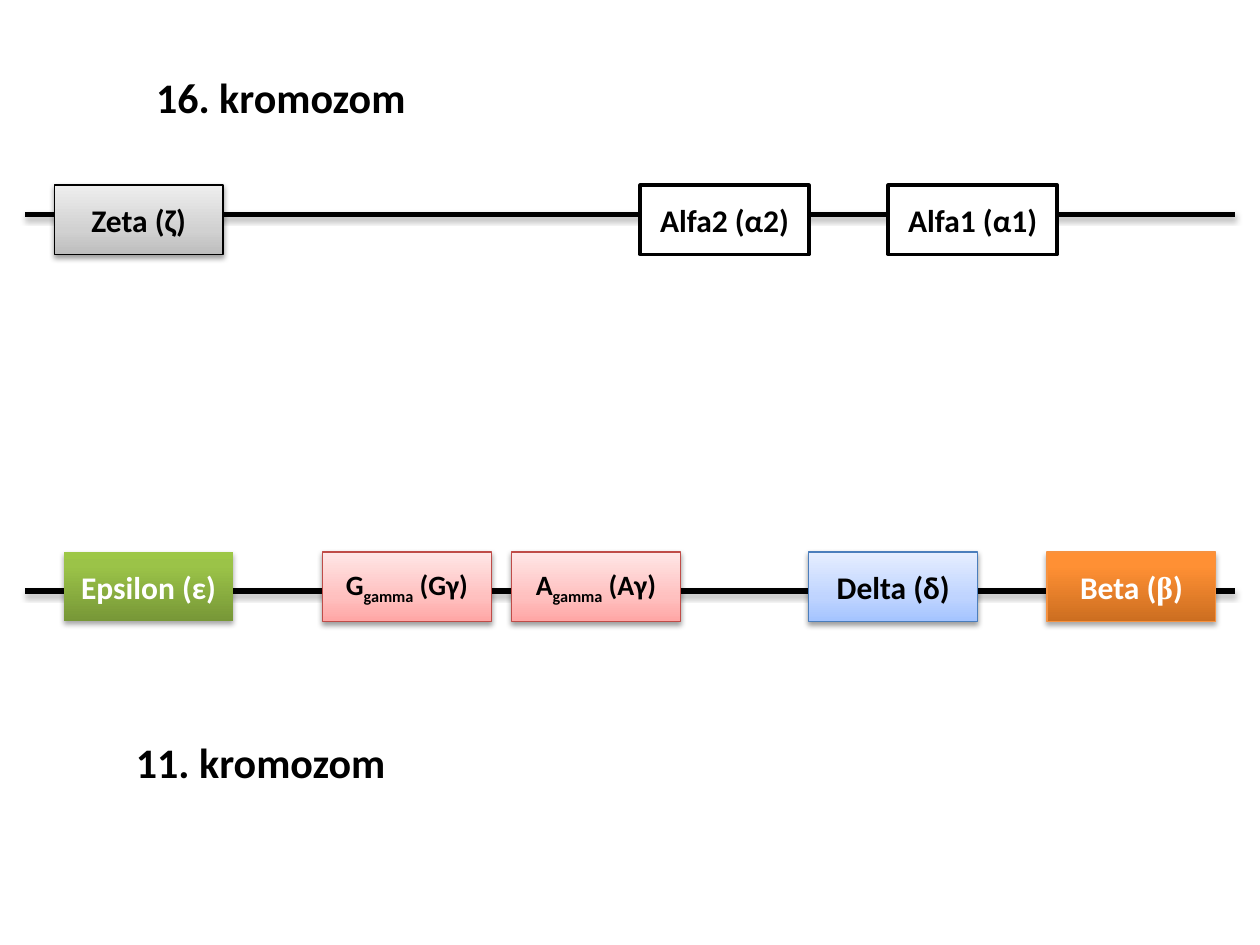
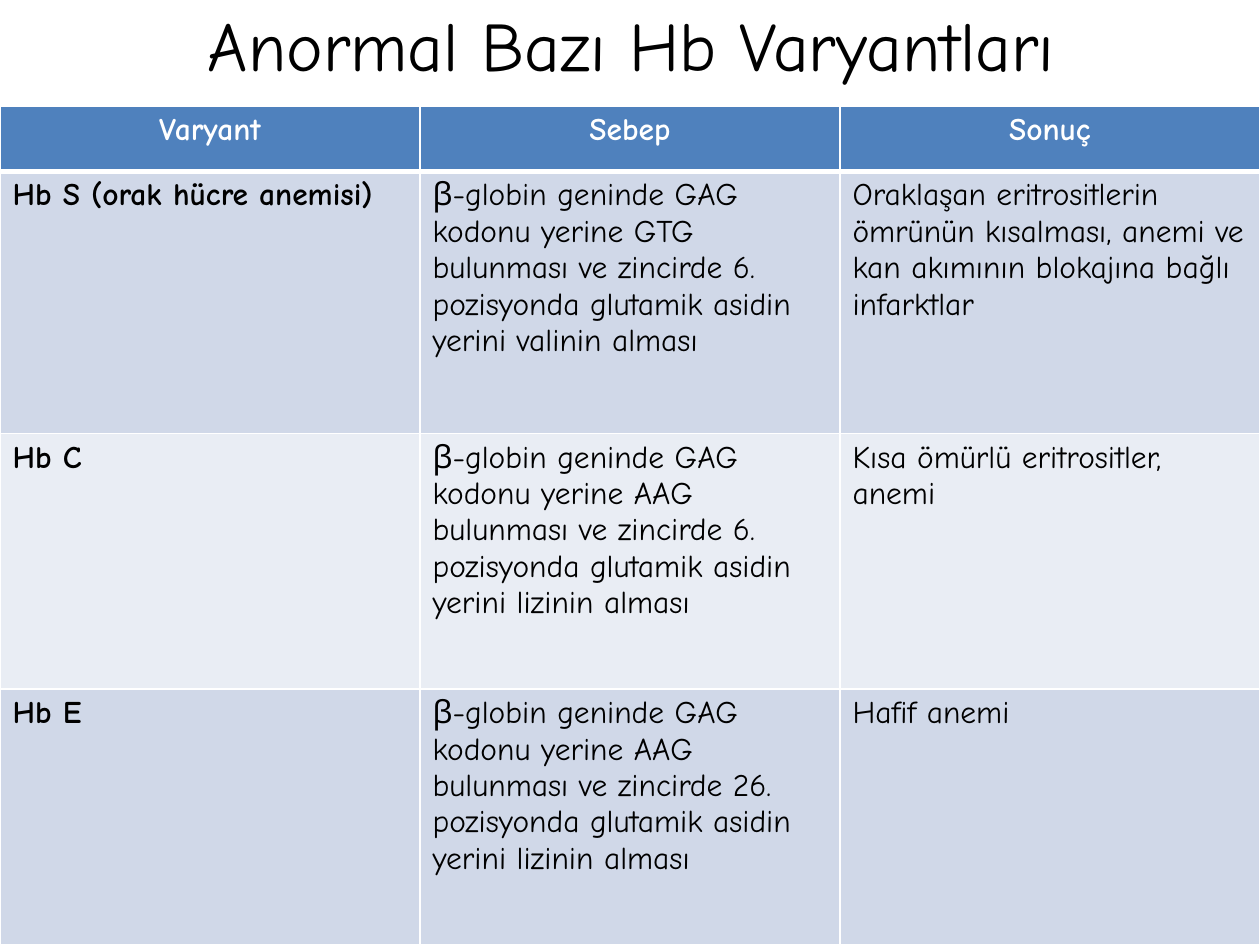
from dataclasses import dataclass

from lxml import etree
from pptx import Presentation
from pptx.dml.color import RGBColor
from pptx.enum.shapes import MSO_CONNECTOR, MSO_SHAPE
from pptx.enum.text import MSO_ANCHOR, MSO_AUTO_SIZE, PP_ALIGN
from pptx.oxml.ns import qn
from pptx.util import Pt

RECT = MSO_SHAPE.RECTANGLE
STRAIGHT = MSO_CONNECTOR.STRAIGHT
MIDDLE = MSO_ANCHOR.MIDDLE
FIT = MSO_AUTO_SIZE.SHAPE_TO_FIT_TEXT
LEFT, CENTER = PP_ALIGN.LEFT, PP_ALIGN.CENTER


@dataclass(frozen=True)
class Theme:
    black: str = "000000"
    white: str = "FFFFFF"
    header: str = "4F81BD"
    bands: tuple = ("D0D8E8", "E9EDF4")
    gene_font: str = "Calibri"
    greek_font: str = "Times New Roman"
    table_font: str = "Comic Neue"
    title_size: float = 39.6
    label_size: float = 24
    body_size: float = 18
    gamma_size: float = 16
    subscript: str = "-25000"
    gene_width: float = 96.5
    gene_height: float = 39.6
    strand_width: float = 3


T = Theme()
STRONG = (35, 1.8)
SOFT = (38, 1.6)

GENE_STYLES = {
    "epsilon": dict(stops=((0, "779737"), (80, "9BC348"), (100, "9DC746")),
                    line=None, shadow=STRONG, color=T.white),
    "gamma": dict(stops=((0, "FFA6A5"), (35, "FFC0BF"), (100, "FFE7E7")),
                  line=("BF4C48", 0.75), shadow=SOFT, color=T.black),
    "delta": dict(stops=((0, "A4C4FF"), (35, "BFD4FF"), (100, "E6EEFF")),
                  line=("4B7EBC", 0.75), shadow=SOFT, color=T.black),
    "beta": dict(stops=((0, "CC6E20"), (80, "FF9034"), (100, "FF9136")),
                 line=("F69240", 0.75), shadow=STRONG, color=T.white),
    "zeta": dict(stops=((0, "BDBDBD"), (35, "D1D1D1"), (100, "EEEEEE")),
                 line=(T.black, 0.75), shadow=SOFT, color=T.black),
    "alfa": dict(stops=None, line=(T.black, 2), shadow=None, color=T.black),
}


def gamma_runs(letter):
    return [(letter, {}), ("gamma", {"subscript": True}), (f" ({letter}γ)", {})]


CHROMOSOMES = [
    dict(box=(14.4, 315.4, 691.2), strand=22.3,
         label=("11. kromozom", 56.2, 102.2),
         genes=[("epsilon", 22.3, [("Epsilon (ε)", {})], T.body_size),
                ("gamma", 169.9, gamma_runs("G"), T.gamma_size),
                ("gamma", 277.9, gamma_runs("A"), T.gamma_size),
                ("delta", 447.8, [("Delta (δ)", {})], T.body_size),
                ("beta", 583.9, [("Beta (", {}), ("β", {"name": T.greek_font}),
                                 (")", {})], T.body_size)]),
    dict(box=(14.4, 105.8, 691.2), strand=16.6,
         label=("16. kromozom", 67.7, -68.4),
         genes=[("zeta", 16.6, [("Zeta (ζ)", {})], T.body_size),
                ("alfa", 351.4, [("Alfa2 (α2)", {})], T.body_size),
                ("alfa", 493.2, [("Alfa1 (α1)", {})], T.body_size)]),
]


def cause(codon, position, amino_acid):
    return (f"β-globin geninde GAG kodonu yerine {codon} bulunması ve zincirde "
            f"{position}. pozisyonda glutamik asidin yerini {amino_acid} alması")


VARIANTS = [
    ("Varyant", "Sebep", "Sonuç"),
    ("Hb S (orak hücre anemisi)", cause("GTG", 6, "valinin"),
     "Oraklaşan eritrositlerin ömrünün kısalması, anemi ve kan akımının "
     "blokajına bağlı infarktlar"),
    ("Hb C", cause("AAG", 6, "lizinin"), "Kısa ömürlü eritrositler, anemi"),
    ("Hb E", cause("AAG", 26, "lizinin"), "Hafif anemi"),
]
ROW_HEIGHTS = (37.4, 149.8, 146.2, 146.2)


def rgb(value):
    return RGBColor.from_string(value)


def sub(parent, tag, **attrs):
    el = etree.SubElement(parent, qn(tag))
    for key, value in attrs.items():
        el.set(key, str(value))
    return el


def write(tf, runs, size, font, color, bold=False, align=LEFT):
    p = tf.paragraphs[0]
    p.alignment = align
    for text, extra in runs:
        r = p.add_run()
        r.text = text
        fmt = dict(name=font, size=Pt(size), bold=bold) | extra
        if fmt.pop("subscript", False):
            r._r.get_or_add_rPr().set("baseline", T.subscript)
        for key, value in fmt.items():
            setattr(r.font, key, value)
        r.font.color.rgb = rgb(color)


def add_shadow(effects, alpha, distance):
    shadow = sub(effects, "a:outerShdw", blurRad=Pt(3.1), dist=Pt(distance),
                 dir=5400000, rotWithShape=0)
    color = sub(shadow, "a:srgbClr", val=T.black)
    sub(color, "a:alpha", val=alpha * 1000)


def fill_gradient(sp, stops):
    sp.fill.gradient()
    sp.fill.gradient_angle = 90
    stop_list = sp._element.spPr.find(qn("a:gradFill")).find(qn("a:gsLst"))
    for old in list(stop_list):
        stop_list.remove(old)
    for position, color in stops:
        stop = sub(stop_list, "a:gs", pos=position * 1000)
        sub(stop, "a:srgbClr", val=color)


def add_strand(s, x, y, width):
    line = s.shapes.add_connector(STRAIGHT, Pt(x), Pt(y), Pt(x + width), Pt(y))
    line.line.color.rgb = rgb(T.black)
    line.line.width = Pt(T.strand_width)
    add_shadow(sub(line._element.spPr, "a:effectLst"), *STRONG)


def add_gene(s, x, y, kind, runs, size):
    style = GENE_STYLES[kind]
    sp = s.shapes.add_shape(RECT, Pt(x), Pt(y), Pt(T.gene_width), Pt(T.gene_height))
    if style["stops"]:
        fill_gradient(sp, style["stops"])
    else:
        sp.fill.solid()
        sp.fill.fore_color.rgb = rgb(T.white)
    if style["line"]:
        color, width = style["line"]
        sp.line.color.rgb = rgb(color)
        sp.line.width = Pt(width)
    else:
        sp.line.fill.background()
    sp.shadow.inherit = False
    if style["shadow"]:
        add_shadow(sp._element.spPr.find(qn("a:effectLst")), *style["shadow"])
    sp.text_frame.vertical_anchor = MIDDLE
    sp.text_frame.word_wrap = True
    write(sp.text_frame, runs, size, T.gene_font, style["color"], True, CENTER)


def add_chromosome(s, box, strand, label, genes):
    x, y, width = box
    add_strand(s, x, y + strand, width)
    for kind, dx, runs, size in genes:
        add_gene(s, x + dx, y, kind, runs, size)
    text, dx, dy = label
    tb = s.shapes.add_textbox(Pt(x + dx), Pt(y + dy), Pt(158.4), Pt(36))
    tb.text_frame.word_wrap = False
    tb.text_frame.auto_size = FIT
    write(tb.text_frame, [(text, {})], T.label_size, T.gene_font, T.black, True)


def add_title(s, box, text):
    tf = s.shapes.add_textbox(*map(Pt, box)).text_frame
    tf.word_wrap = True
    tf.vertical_anchor = MIDDLE
    write(tf, [(text, {})], T.title_size, T.table_font, T.black, align=CENTER)


def set_borders(cell, **widths):
    tcPr = cell._tc.get_or_add_tcPr()
    for i, side in enumerate("LRTB"):
        ln = sub(tcPr, f"a:ln{side}", w=Pt(widths.get(side, 1)))
        sub(sub(ln, "a:solidFill"), "a:srgbClr", val=T.white)
        tcPr.insert(i, ln)


def add_variant_table(s, box):
    x, y, width = box
    cols = len(VARIANTS[0])
    table = s.shapes.add_table(len(VARIANTS), cols, Pt(x), Pt(y), Pt(width),
                               Pt(sum(ROW_HEIGHTS))).table
    for col in table.columns:
        col.width = Pt(width / cols)
    for i, texts in enumerate(VARIANTS):
        table.rows[i].height = Pt(ROW_HEIGHTS[i])
        head = i == 0
        for j, text in enumerate(texts):
            cell = table.cell(i, j)
            cell.fill.solid()
            cell.fill.fore_color.rgb = rgb(T.header if head else T.bands[(i - 1) % 2])
            set_borders(cell, T=3 if i == 1 else 1, B=3 if head else 1)
            write(cell.text_frame, [(text, {})], T.body_size, T.table_font,
                  T.white if head else T.black, head or j == 0,
                  CENTER if head else LEFT)


def main():
    prs = Presentation()
    prs.slide_width, prs.slide_height = Pt(720), Pt(540)
    blank = prs.slide_layouts[6]

    s = prs.slides.add_slide(blank)
    for chromosome in CHROMOSOMES:
        add_chromosome(s, **chromosome)

    s = prs.slides.add_slide(blank)
    add_title(s, (36.7, 0, 648, 49.7), "Anormal Bazı Hb Varyantları")
    add_variant_table(s, (0, 60.5, 720))

    prs.save("out.pptx")


if __name__ == "__main__":
    main()
